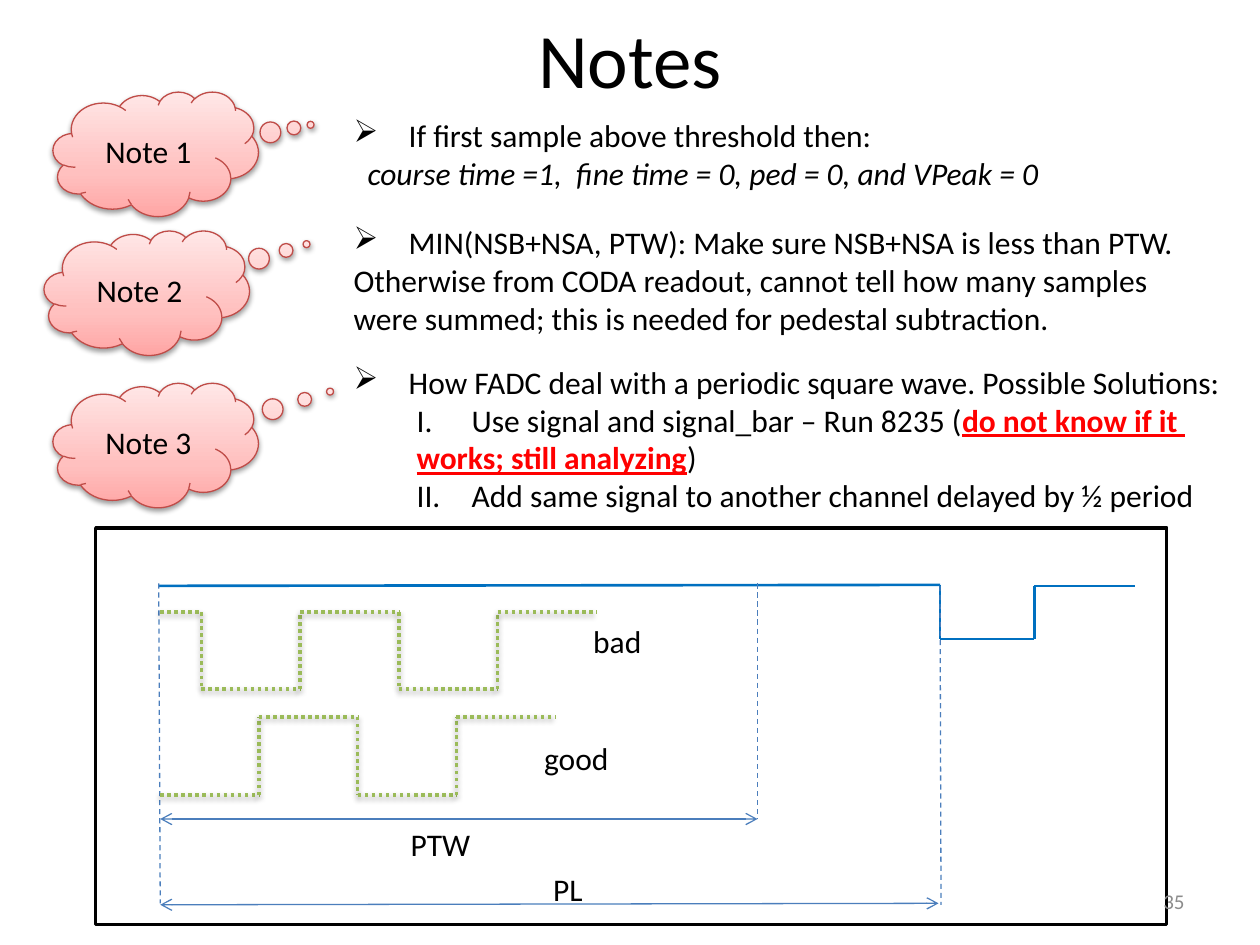
import copy
from dataclasses import dataclass
from typing import Any, Optional

import lxml.etree
import pptx
import pptx.dml.color
import pptx.enum.dml
import pptx.enum.shapes
import pptx.enum.text
import pptx.oxml.ns
import pptx.util

Cm = pptx.util.Cm
qn = pptx.oxml.ns.qn
DASH = pptx.enum.dml.MSO_LINE
ALIGN = pptx.enum.text.PP_ALIGN
Point = tuple[float, float]
Box = tuple[float, float, float, float]


@dataclass(frozen=True)
class Theme:
    font: str = "Calibri"
    title_size: int = 44
    body_size: int = 18
    number_size: int = 12
    text: str = "000000"
    warning: str = "FF0000"
    number: str = "8C8C8C"
    signal: str = "0070C0"
    guide: str = "4B7EBC"
    wave: str = "9BBB59"
    cloud_line: str = "BF4C48"
    cloud_stops: tuple = ((0, "FFA6A5"), (0.35, "FFC0BF"), (1, "FFE7E7"))


@dataclass(frozen=True)
class Run:
    text: str
    italic: bool = False
    warning: bool = False


@dataclass(frozen=True)
class Line:
    runs: tuple[Run, ...]
    left: float = 0
    hanging: float = 0
    bullet: str = ""
    number: int = 0


@dataclass(frozen=True)
class Note:
    label: str
    cloud: Point
    tail: Point
    box: Box
    lines: tuple[Line, ...]


@dataclass(frozen=True)
class Stroke:
    color: str
    width: float
    dash: Optional[Any] = None
    arrows: bool = False
    shadow: bool = False


THEME = Theme()
HANG = 1.11
CLOUD_SIZE = (4.14, 2.51)
HALF_PERIOD = 1.99
SIGNAL = Stroke(THEME.signal, 1.5)
GUIDE = Stroke(THEME.guide, 0.75, dash=DASH.DASH)
SPAN = Stroke(THEME.guide, 0.75, arrows=True)
WAVE = Stroke(THEME.wave, 2, dash=DASH.ROUND_DOT, shadow=True)


def arrow_line(text: str) -> Line:
    return Line((Run(text),), HANG, HANG, bullet="➢")


NOTES = (
    Note("Note 2", (0.89, 4.65), (0.778, -0.391), (6.88, 4.37, 17.2, 2.57), (
        arrow_line("MIN(NSB+NSA, PTW): Make sure NSB+NSA is less than PTW."),
        Line((Run("Otherwise from CODA readout, cannot tell how many samples"),)),
        Line((Run("were summed; this is needed for pedestal subtraction."),)))),
    Note("Note 3", (1.07, 7.72), (0.849, -0.43), (6.88, 7.19, 18.19, 3.33), (
        arrow_line("How FADC deal with a periodic square wave. Possible Solutions:"),
        Line((Run("Use signal and signal_bar – Run 8235 ("),
              Run("do not know if it ", warning=True)), 2.38, HANG, number=1),
        Line((Run("works; still analyzing", warning=True), Run(")")), 1.27),
        Line((Run("Add same signal to another channel delayed by ½ period"),),
             2.38, HANG, number=2))),
    Note("Note 1", (1.07, 1.85), (0.754, -0.234), (6.88, 2.21, 14.99, 1.8), (
        arrow_line("If first sample above threshold then:"),
        Line((Run("course time =1,  fine time = 0, ped = 0, and VPeak = 0",
                  italic=True),), 0.28))),
)


def rgb(color: str) -> pptx.dml.color.RGBColor:
    return pptx.dml.color.RGBColor.from_string(color)


def add_run(paragraph: Any, text: str, size: int = THEME.body_size,
            color: str = THEME.text) -> Any:
    run = paragraph.add_run()
    run.text = text
    run.font.name, run.font.size = THEME.font, pptx.util.Pt(size)
    run.font.color.rgb = rgb(color)
    return run


def add_shadow(shape: Any) -> None:
    effects = shape.element.spPr.find(qn("a:effectLst"))
    shadow = lxml.etree.SubElement(effects, qn("a:outerShdw"), blurRad="40000",
                                   dist="20000", dir="5400000", rotWithShape="0")
    color = lxml.etree.SubElement(shadow, qn("a:srgbClr"), val="000000")
    lxml.etree.SubElement(color, qn("a:alpha"), val="38000")


def add_text(shapes: Any, box: Box, lines: tuple[Line, ...]) -> None:
    shape = shapes.add_textbox(*map(Cm, box))
    frame = shape.text_frame
    frame.word_wrap = False
    frame.auto_size = pptx.enum.text.MSO_AUTO_SIZE.SHAPE_TO_FIT_TEXT
    for index, line in enumerate(lines):
        paragraph = frame.add_paragraph() if index else frame.paragraphs[0]
        properties = paragraph._p.get_or_add_pPr()
        properties.set("marL", str(Cm(line.left)))
        properties.set("indent", str(-Cm(line.hanging)))
        if line.bullet:
            lxml.etree.SubElement(properties, qn("a:buChar"), char=line.bullet)
        elif line.number:
            lxml.etree.SubElement(properties, qn("a:buAutoNum"),
                                  type="romanUcPeriod", startAt=str(line.number))
        for part in line.runs:
            run = add_run(paragraph, part.text,
                          color=THEME.warning if part.warning else THEME.text)
            run.font.italic = part.italic
            run.font.bold = run.font.underline = part.warning


def add_cloud(shapes: Any, note: Note) -> None:
    cloud = shapes.add_shape(pptx.enum.shapes.MSO_SHAPE.CLOUD_CALLOUT,
                             *map(Cm, note.cloud + CLOUD_SIZE))
    cloud.adjustments[0], cloud.adjustments[1] = note.tail
    cloud.fill.gradient()
    cloud.fill.gradient_angle = 90
    stop_list = cloud.element.spPr.find(".//" + qn("a:gsLst"))
    stop_list.append(copy.deepcopy(stop_list[-1]))
    for stop, (position, color) in zip(cloud.fill.gradient_stops, THEME.cloud_stops):
        stop.position = position
        stop.color.rgb = rgb(color)
    cloud.line.color.rgb = rgb(THEME.cloud_line)
    cloud.line.width = pptx.util.Pt(0.75)
    cloud.shadow.inherit = False
    add_shadow(cloud)
    cloud.text_frame.vertical_anchor = pptx.enum.text.MSO_ANCHOR.MIDDLE
    paragraph = cloud.text_frame.paragraphs[0]
    paragraph.alignment = ALIGN.CENTER
    add_run(paragraph, note.label)


def add_path(shapes: Any, points: list[Point], stroke: Stroke) -> None:
    """Join consecutive points with straight connectors."""
    for start, end in zip(points, points[1:]):
        connector = shapes.add_connector(pptx.enum.shapes.MSO_CONNECTOR.STRAIGHT,
                                         *map(Cm, start + end))
        connector.line.color.rgb = rgb(stroke.color)
        connector.line.width = pptx.util.Pt(stroke.width)
        if stroke.dash is not None:
            connector.line.dash_style = stroke.dash
        if stroke.arrows:
            outline = connector.element.spPr.find(qn("a:ln"))
            for tag in ("a:headEnd", "a:tailEnd"):
                lxml.etree.SubElement(outline, qn(tag), type="arrow")
        lxml.etree.SubElement(connector.element.spPr, qn("a:effectLst"))
        if stroke.shadow:
            add_shadow(connector)


def square_wave(start: float, first_edge: float, levels: Point, edges: int) -> list[Point]:
    """Points of a wave that begins on the first level and ends after a plateau."""
    points = [(start, levels[0])]
    for index in range(edges):
        x = first_edge + index * HALF_PERIOD
        points += [(x, levels[index % 2]), (x, levels[(index + 1) % 2])]
    return points + [(first_edge + edges * HALF_PERIOD, levels[edges % 2])]


def add_diagram(slide: Any) -> None:
    shapes = slide.shapes.add_group_shape().shapes
    frame = shapes.add_shape(pptx.enum.shapes.MSO_SHAPE.RECTANGLE,
                             *map(Cm, (1.93, 10.64, 21.59, 8)))
    frame.fill.background()
    frame.line.color.rgb = rgb(THEME.text)
    frame.line.width = pptx.util.Pt(2)
    frame.shadow.inherit = False

    # Trigger signal, window limits and spans
    add_path(shapes, [(3.2, 11.81), (18.95, 11.79), (18.95, 12.88), (20.85, 12.88),
                      (20.85, 11.81), (22.89, 11.81)], SIGNAL)
    add_path(shapes, [(18.95, 11.81), (18.97, 18.24)], GUIDE)
    add_path(shapes, [(3.2, 11.76), (3.23, 18.21)], GUIDE)
    add_path(shapes, [(15.27, 11.76), (15.27, 16.51)], GUIDE)
    add_path(shapes, [(3.23, 18.24), (18.92, 18.21)], SPAN)
    add_path(shapes, [(3.23, 16.51), (15.27, 16.51)], SPAN)

    # Good and bad square waves
    add_path(shapes, square_wave(3.23, 5.22, (16.03, 14.45), 3), WAVE)
    add_path(shapes, square_wave(3.23, 4.06, (12.34, 13.89), 4)[:-1]
             + [(12.02, 12.34)], WAVE)
    for label, box in (("PL", (10.9, 17.42, 1.12, 0.91)), ("PTW", (8.03, 16.51, 1.73, 0.91)),
                       ("bad", (11.71, 12.42, 1.5, 1.02)), ("good", (10.72, 14.78, 1.83, 1.02))):
        add_text(shapes, box, (Line((Run(label),)),))


def main() -> None:
    presentation = pptx.Presentation()
    presentation.slide_width, presentation.slide_height = Cm(25.4), Cm(19.05)
    slide = presentation.slides.add_slide(presentation.slide_layouts[5])

    # Title
    title = slide.shapes.title
    title.left, title.top, title.width, title.height = map(Cm, (1.27, 0, 22.86, 2.34))
    add_run(title.text_frame.paragraphs[0], "Notes", THEME.title_size)

    # Notes and timing diagram
    for note in NOTES:
        add_cloud(slide.shapes, note)
        add_text(slide.shapes, note.box, note.lines)
    add_diagram(slide)

    # Slide number
    number = slide.shapes.add_textbox(*map(Cm, (18.21, 17.65, 5.92, 1.02))).text_frame
    number.word_wrap = True
    number.vertical_anchor = pptx.enum.text.MSO_ANCHOR.MIDDLE
    number.paragraphs[0].alignment = ALIGN.RIGHT
    add_run(number.paragraphs[0], "35", THEME.number_size, THEME.number)
    presentation.save("out.pptx")


if __name__ == "__main__":
    main()
